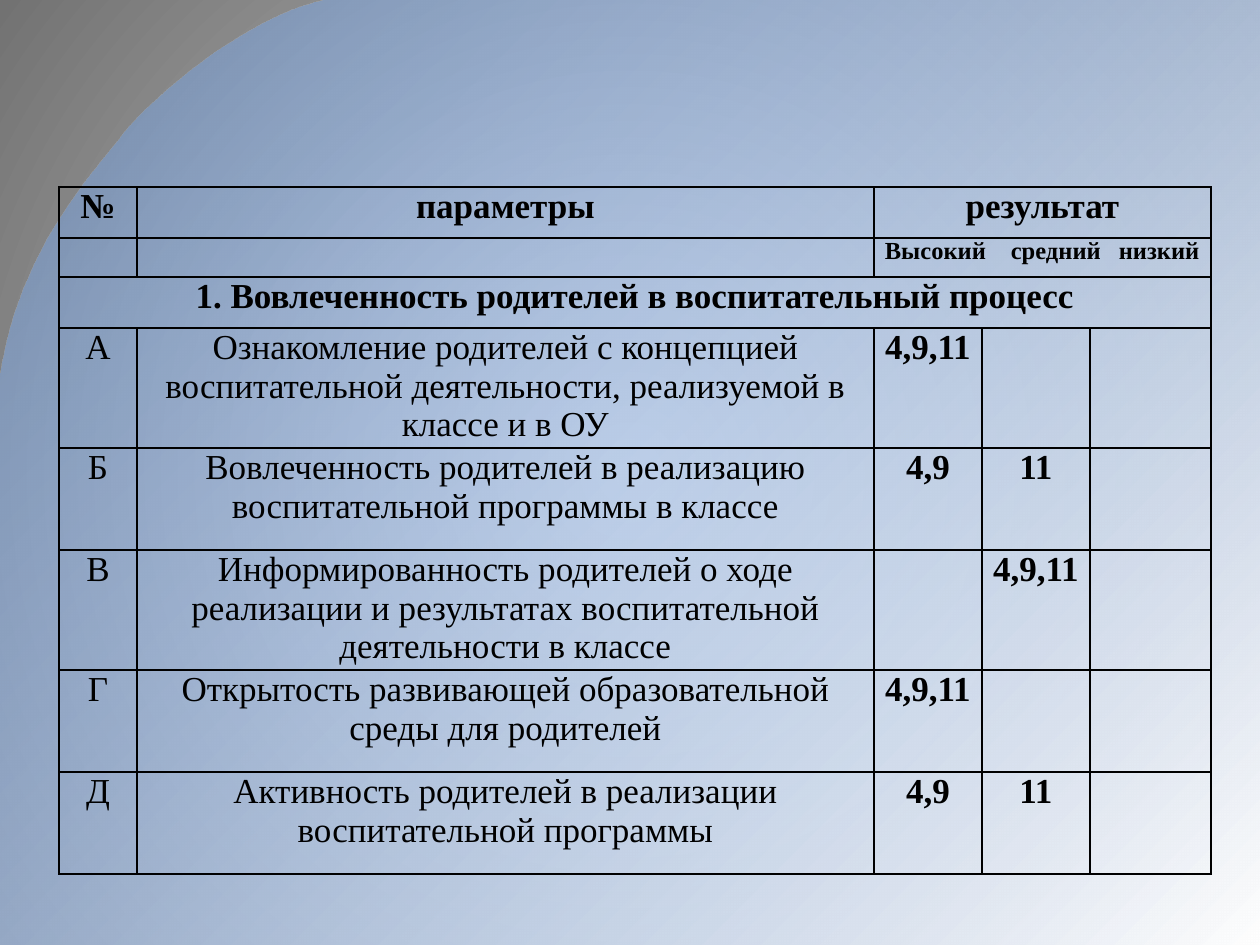
from lxml.etree import SubElement
from pptx import Presentation
from pptx.dml.color import RGBColor
from pptx.enum.text import PP_ALIGN
from pptx.oxml.ns import qn
from pptx.util import Pt

UNIT = 914400 // 126
WIDE, HIGH = 1260, 945
FACE = "Times New Roman"
COLS = [78, 737, 108, 108, 121]
ROWS = [51, 39, 51, 120, 102, 120, 102, 102]
HEAD = {"size": Pt(20), "bold": True}
BODY = {"size": Pt(20), "bold": False}
NOTE = {"size": Pt(14), "bold": True}
STOPS = [128, 236]
CURVE = [
    [(325, 0), (239, 20), (146, 105), (123, 135)],
    [(123, 135), (101, 166), (20, 244), (0, 379)],
]
MERGE = [(0, 2), (1, 2), (2, 0)]
DATA = [
    ["№", "параметры", "результат", "", ""],
    ["", "", "Высокий\tсредний\tнизкий", "", ""],
    ["1. Вовлеченность родителей в воспитательный процесс", "", "", "", ""],
    ["А", "Ознакомление родителей с концепцией воспитательной деятельности, "
     "реализуемой в классе и в ОУ", "4,9,11", "", ""],
    ["Б", "Вовлеченность родителей в реализацию воспитательной программы в классе",
     "4,9", "11", ""],
    ["В", "Информированность родителей о ходе реализации и результатах "
     "воспитательной деятельности в классе", "", "4,9,11", ""],
    ["Г", "Открытость развивающей образовательной среды для родителей",
     "4,9,11", "", ""],
    ["Д", "Активность родителей в реализации воспитательной программы",
     "4,9", "11", ""],
]


def px(num):
    """Turn pixels into EMU."""
    return num * UNIT


def hue(code):
    """Turn a hex string into a colour."""
    return RGBColor.from_string(code)


def put(item, form):
    """Set each attribute named in a dict."""
    for name, value in form.items():
        setattr(item, name, value)


def shade(fill, codes):
    """Give a fill a two-stop gradient."""
    fill.gradient()
    for stop, code in zip(fill.gradient_stops, codes):
        stop.color.rgb = hue(code)


def glow(slide):
    """Paint the round grey background."""
    shade(slide.background.fill, ["CFCFCF", "727272"])
    grad = slide._element.find(".//" + qn("a:gradFill"))
    grad.remove(grad.find(qn("a:lin")))
    way = SubElement(grad, qn("a:path"), path="circle")
    SubElement(way, qn("a:fillToRect"), dict.fromkeys("ltrb", "50000"))


def bend(knots, steps=24):
    """List the points along a cubic curve."""
    spots = []
    for step in range(1, steps + 1):
        t = step / steps
        parts = [(1 - t) ** 3, 3 * t * (1 - t) ** 2, 3 * t * t * (1 - t), t ** 3]
        spots.append(tuple(sum(p * k[i] for p, k in zip(parts, knots)) for i in (0, 1)))
    return spots


def sweep(slide, x, y, w, h):
    """Draw the clear blue sheet with its curved corner."""
    line = [CURVE[0][0], *bend(CURVE[0]), *bend(CURVE[1]), (0, h), (w, h), (w, 0)]
    spots = [(px(x + a), px(y + b)) for a, b in line]
    pen = slide.shapes.build_freeform(*spots[0])
    pen.add_line_segments(spots[1:], close=True)
    sheet = pen.convert_to_shape()
    sheet.shadow.inherit = False
    sheet.line.fill.background()
    shade(sheet.fill, ["699DE9", "FFFFFF"])
    sheet.fill.gradient_angle = 315
    tint = sheet._element.find(".//" + qn("a:srgbClr"))
    SubElement(tint, qn("a:alpha"), val="39000")


def edge(cell):
    """Draw thin black borders and clear the fill."""
    for side in ("lnL", "lnR", "lnT", "lnB"):
        line = SubElement(cell._tc.get_or_add_tcPr(), qn("a:" + side), w=str(Pt(1)))
        paint = SubElement(line, qn("a:solidFill"))
        SubElement(paint, qn("a:srgbClr"), val="000000")
    cell.fill.background()


def write(cell, text, form):
    """Fill one cell with styled text."""
    put(cell, {"margin_left": px(9), "margin_right": px(9),
               "margin_top": 0, "margin_bottom": 0})
    para = cell.text_frame.paragraphs[0]
    para.alignment = PP_ALIGN.CENTER
    if not text:
        SubElement(para._p, qn("a:endParaRPr"), sz="1400")
        return
    if "\t" in text:
        para.alignment = PP_ALIGN.LEFT
        cell.margin_left = px(11)
        tabs = SubElement(para._p.get_or_add_pPr(), qn("a:tabLst"))
        for stop in STOPS:
            SubElement(tabs, qn("a:tab"), pos=str(px(stop - 2)), algn="l")
    run = para.add_run()
    run.text = text
    put(run.font, {"name": FACE, **form})
    run.font.color.rgb = hue("000000")


def style(row, col):
    """Pick the text format of a cell."""
    if row == 1:
        return NOTE
    return BODY if row > 2 and col < 2 else HEAD


def grid(slide, x, y):
    """Build the table of results."""
    box = (x, y, sum(COLS), sum(ROWS))
    table = slide.shapes.add_table(len(ROWS), len(COLS), *map(px, box)).table
    put(table, {"first_row": False, "horz_banding": False})
    for col, w in zip(table.columns, COLS):
        col.width = px(w)
    for r, (row, h) in enumerate(zip(table.rows, ROWS)):
        row.height = px(h)
        for c, cell in enumerate(row.cells):
            edge(cell)
            write(cell, DATA[r][c], style(r, c))
    for r, c in MERGE:
        table.cell(r, c).merge(table.cell(r, len(COLS) - 1))


def main():
    """Make the slide and save it."""
    deck = Presentation()
    put(deck, {"slide_width": px(WIDE), "slide_height": px(HIGH)})
    slide = deck.slides.add_slide(deck.slide_layouts[6])
    glow(slide)
    sweep(slide, 0, 0, WIDE, HIGH)
    grid(slide, 59, 187)
    deck.save("out.pptx")


if __name__ == "__main__":
    main()
